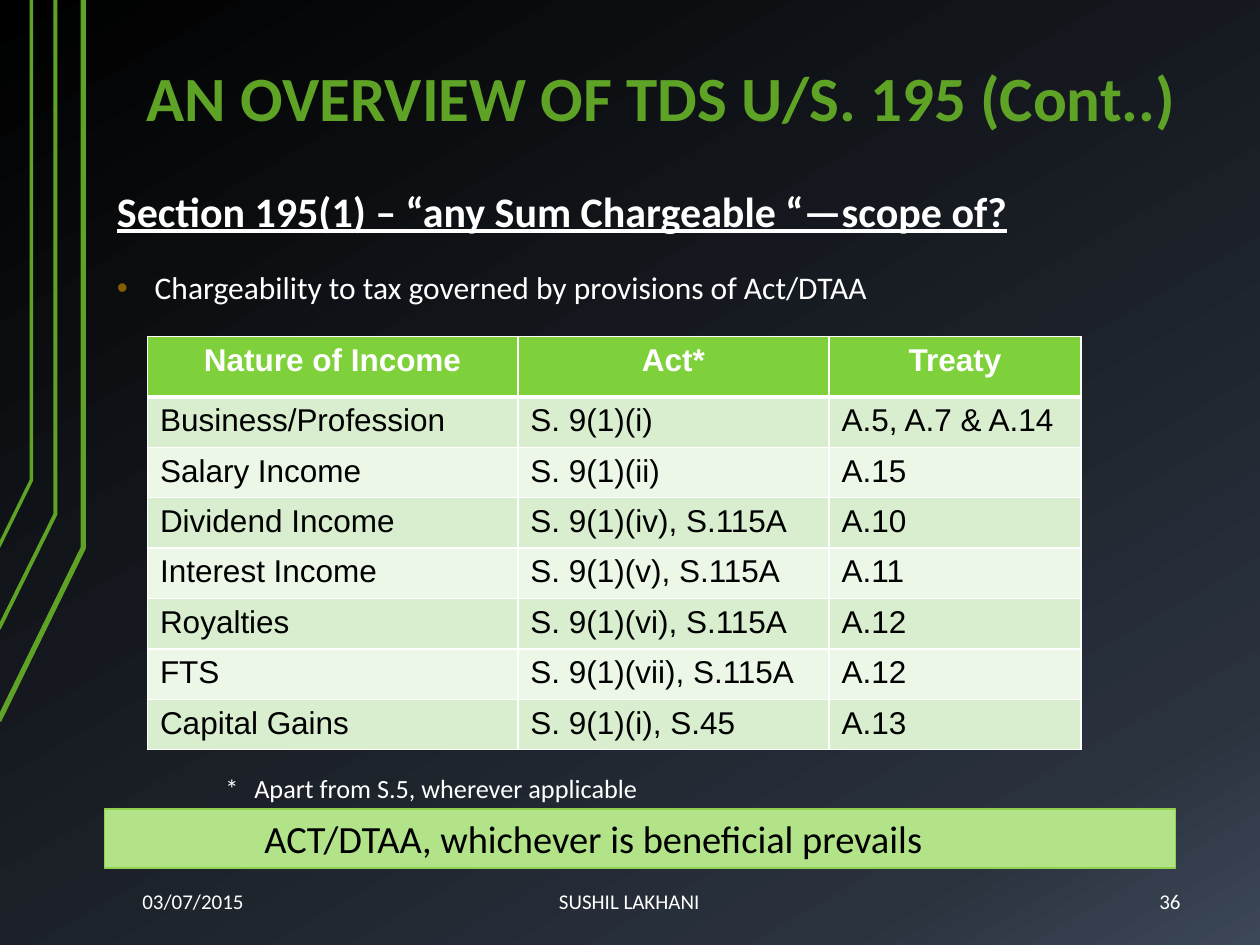
"""Builds the slide on the scope of section 195(1)."""
from copy import deepcopy

from lxml import etree
from pptx import Presentation
from pptx.dml.color import RGBColor
from pptx.enum.shapes import MSO_SHAPE
from pptx.enum.text import MSO_ANCHOR, PP_ALIGN
from pptx.oxml.ns import qn
from pptx.util import Inches, Pt

LEFT, MID, RIGHT = PP_ALIGN.LEFT, PP_ALIGN.CENTER, PP_ALIGN.RIGHT
TOP, CENTER, BASE = MSO_ANCHOR.TOP, MSO_ANCHOR.MIDDLE, MSO_ANCHOR.BOTTOM
RECT = MSO_SHAPE.RECTANGLE
WHITE = RGBColor(0xFF, 0xFF, 0xFF)
BLACK = RGBColor(0, 0, 0)
GREEN = RGBColor(0x5F, 0xA3, 0x26)
HEAD = RGBColor(0x7F, 0xD1, 0x3B)
BANDS = RGBColor(0xD8, 0xEE, 0xCE), RGBColor(0xEC, 0xF7, 0xE8)
LIME = RGBColor(0xB2, 0xE3, 0x89)
EDGE = RGBColor(0x92, 0xD0, 0x50)
BROWN = RGBColor(0x83, 0x5E, 0x01)
STOPS = [(0, BLACK), (0.85, RGBColor(0x2A, 0x32, 0x3E)),
         (1, RGBColor(0x3C, 0x47, 0x57))]

LINES = [
    (3, [(-0.01, 5.72), (0.66, 4.35), (0.66, 0)]),
    (2.25, [(-0.01, 4.99), (0.44, 4.08), (0.44, 0)]),
    (2, [(-0.01, 4.34), (0.25, 3.81), (0.25, 0)]),
]
ROWS = [
    ("Nature of Income", "Act*", "Treaty"),
    ("Business/Profession", "S. 9(1)(i)", "A.5, A.7 & A.14"),
    ("Salary Income", "S. 9(1)(ii)", "A.15"),
    ("Dividend Income", "S. 9(1)(iv), S.115A", "A.10"),
    ("Interest Income", "S. 9(1)(v), S.115A", "A.11"),
    ("Royalties", "S. 9(1)(vi), S.115A", "A.12"),
    ("FTS", "S. 9(1)(vii), S.115A", "A.12"),
    ("Capital Gains", "S. 9(1)(i), S.45", "A.13"),
]
WIDTHS = [2.94, 2.47, 2]
HIGH, LOW = 0.48, 0.4
PAD = (0.1, 0.05)
WIDE = (0.13, 0.07)
BOLD = {"bold": True}
TEXTS = [
    ("Section 195(1) – “any Sum Chargeable “—scope of?",
     (0.83, 1.42, 7.75, 0.5), 24, WHITE, LEFT, TOP, PAD,
     {"bold": True, "underline": True}, (0, 0)),
    ("Chargeability to tax governed by provisions of Act/DTAA",
     (0.83, 2.08, 8.5, 0.4), 18, WHITE, LEFT, TOP, PAD, {}, (0.3, -0.3)),
    ("*\tApart from S.5, wherever applicable",
     (0.75, 6.08, 8.75, 0.35), 15, WHITE, LEFT, TOP, PAD, {}, (1.17, -0.23)),
    ("ACT/DTAA, whichever is beneficial prevails",
     (0.83, 6.42, 8.5, 0.47), 22, BLACK, LEFT, TOP, PAD, {}, (1.17, 0)),
    ("AN OVERVIEW OF TDS U/S. 195 (Cont..)",
     (1, 0.25, 8.5, 0.89), 36, GREEN, MID, BASE, WIDE, BOLD, (0, 0)),
    ("36", (8.67, 6.95, 0.83, 0.4), 12, WHITE, RIGHT, CENTER, WIDE, {}, (0, 0)),
    ("03/07/2015", (1, 6.95, 1.83, 0.4), 12, WHITE, LEFT, CENTER, WIDE, {},
     (0, 0)),
    ("SUSHIL LAKHANI", (2.83, 6.95, 4.33, 0.4), 12, WHITE, MID, CENTER, WIDE,
     {}, (0, 0)),
]
BULLET, BANNER = TEXTS[1][0], TEXTS[3][0]


def style(para, text, size, color, align, face="Calibri", **more):
    para.alignment = align
    run = para.add_run()
    run.text = text
    form = {"name": face, "size": Pt(size), **more}
    for key, value in form.items():
        setattr(run.font, key, value)
    run.font.color.rgb = color


def add_text(slide, text, box, size, color, align, anchor, pad, more, dent):
    place = [Inches(v) for v in box]
    if text == BANNER:
        shape = slide.shapes.add_shape(RECT, *place)
        shape.shadow.inherit = False
        shape.fill.solid()
        shape.fill.fore_color.rgb = LIME
        shape.line.color.rgb = EDGE
        shape.line.width = Pt(0.75)
    else:
        shape = slide.shapes.add_textbox(*place)
    frame = shape.text_frame
    side, edge = map(Inches, pad)
    form = {"word_wrap": True, "vertical_anchor": anchor,
            "margin_left": side, "margin_right": side,
            "margin_top": edge, "margin_bottom": edge}
    for key, value in form.items():
        setattr(frame, key, value)
    para = frame.paragraphs[0]
    if anchor == BASE:
        para.line_spacing = 0.9
    style(para, text, size, color, align, **more)
    props = para._p.get_or_add_pPr()
    for key, value in zip(("marL", "indent"), dent):
        props.set(key, str(Inches(value)))
    if text == BULLET:
        tint = etree.SubElement(props, qn("a:buClr"))
        etree.SubElement(tint, qn("a:srgbClr"), val=str(BROWN))
        etree.SubElement(props, qn("a:buFont"), typeface="Arial")
        etree.SubElement(props, qn("a:buChar"), char="•")


def add_border(cell, top):
    props = cell._tc.get_or_add_tcPr()
    for side in "LRTB":
        thick = 3 if (top and side == "B") else 1
        line = etree.SubElement(props, qn("a:ln" + side), w=str(Pt(thick)))
        fill = etree.SubElement(line, qn("a:solidFill"))
        etree.SubElement(fill, qn("a:srgbClr"), val=str(WHITE))


def add_grid(slide):
    tall = HIGH + LOW * (len(ROWS) - 1)
    place = [Inches(v) for v in (1.17, 2.67, sum(WIDTHS), tall)]
    table = slide.shapes.add_table(len(ROWS), len(WIDTHS), *place).table
    for col, width in zip(table.columns, WIDTHS):
        col.width = Inches(width)
    for r, row in enumerate(ROWS):
        top = r == 0
        table.rows[r].height = Inches(HIGH if top else LOW)
        for c, text in enumerate(row):
            cell = table.cell(r, c)
            add_border(cell, top)
            cell.fill.solid()
            cell.fill.fore_color.rgb = HEAD if top else BANDS[(r - 1) % 2]
            style(cell.text_frame.paragraphs[0], text, 18,
                  WHITE if top else BLACK, MID if top else LEFT,
                  "Arial", bold=top)


def add_back(slide):
    fill = slide.background.fill
    fill.gradient()
    fill.gradient_angle = 300
    stops = slide.element.find(".//" + qn("a:gsLst"))
    stops.append(deepcopy(stops[-1]))
    for stop, (spot, color) in zip(fill.gradient_stops, STOPS):
        stop.position = spot
        stop.color.rgb = color


def add_lines(slide):
    for width, points in LINES:
        spots = [(Inches(x), Inches(y)) for x, y in points]
        build = slide.shapes.build_freeform(*spots[0])
        build.add_line_segments(spots[1:], close=False)
        shape = build.convert_to_shape()
        shape.shadow.inherit = False
        shape.fill.background()
        shape.line.color.rgb = GREEN
        shape.line.width = Pt(width)


def main():
    deck = Presentation()
    deck.slide_width, deck.slide_height = Inches(10), Inches(7.5)
    slide = deck.slides.add_slide(deck.slide_layouts[6])
    add_back(slide)
    add_lines(slide)
    add_grid(slide)
    for item in TEXTS:
        add_text(slide, *item)
    deck.save("out.pptx")


if __name__ == "__main__":
    main()
